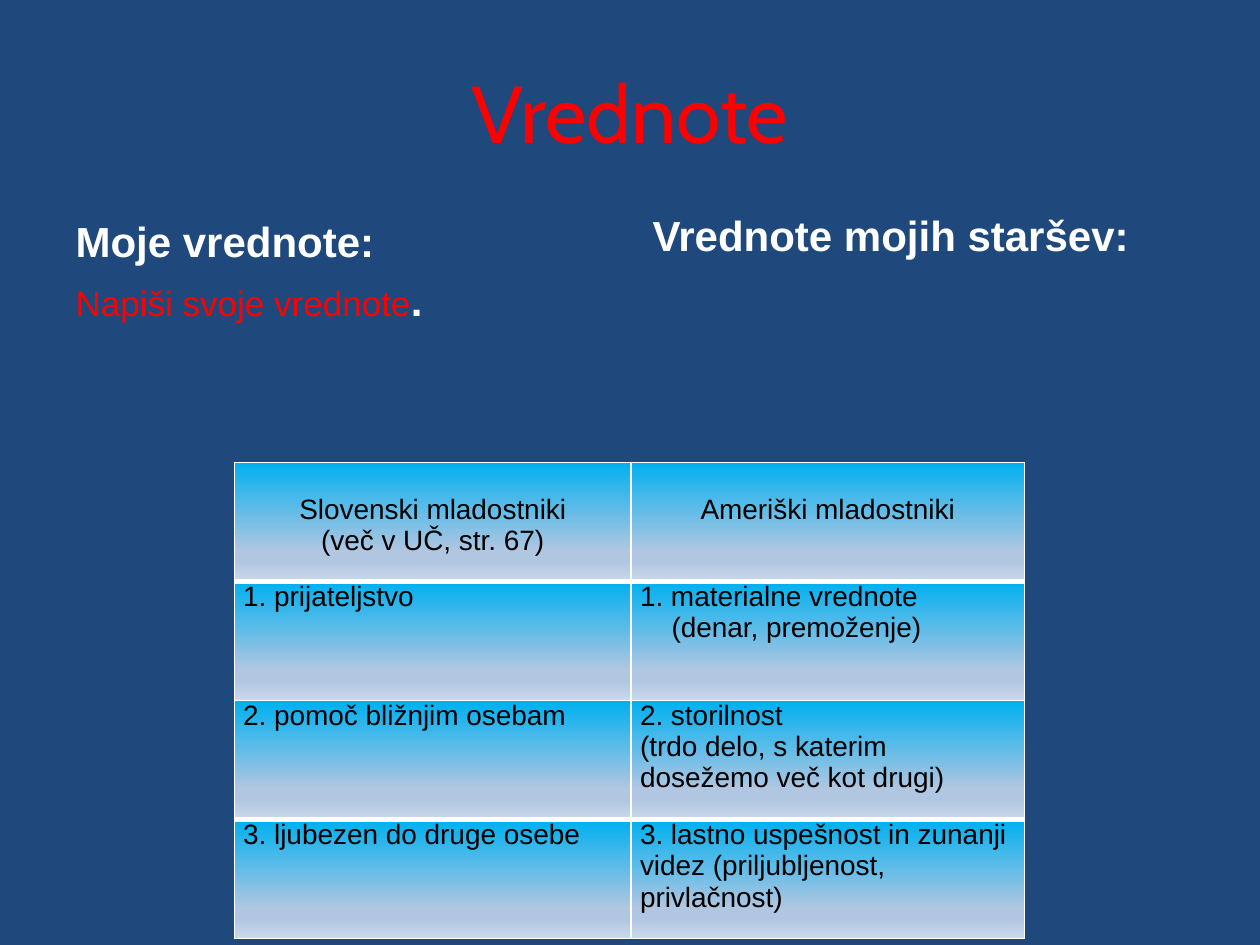
import pptx
import pptx.util
import pptx.dml.color
import pptx.enum.text
import pptx.oxml
import pptx.oxml.ns

Pt = pptx.util.Pt
Align = pptx.enum.text.PP_ALIGN
Anchor = pptx.enum.text.MSO_ANCHOR
HUES = {"navy": "1F497D", "red": "FF0000", "white": "FFFFFF", "black": "000000",
        "sky": "00B0F0", "mist": "B0C6E1", "pale": "CAD9EB"}
STOPS = [(0, "sky"), (74, "mist"), (83, "mist"), (100, "pale")]

FORMS = {
    "title": {"name": "Cabin", "size": Pt(46), "bold": False, "hue": "red"},
    "head": {"name": "Arial", "size": Pt(24), "bold": True, "hue": "white"},
    "task": {"name": "Arial", "size": Pt(20), "bold": False, "hue": "red"},
    "cell": {"name": "Arial", "size": Pt(16), "bold": False, "hue": "black"},
}


def write(para, text, form):
    run = para.add_run()
    run.text = text
    for key, value in FORMS[form].items():
        if key == "hue":
            run.font.color.rgb = pptx.dml.color.RGBColor.from_string(HUES[value])
        else:
            setattr(run.font, key, value)


def paint(cell, top, base):
    """Give a cell its white borders, in points, and its gradient."""
    props = cell._tc.get_or_add_tcPr()
    space = pptx.oxml.ns.nsdecls("a")
    for side, width in {"L": 1, "R": 1, "T": top, "B": base}.items():
        props.append(pptx.oxml.parse_xml(
            f'<a:ln{side} {space} w="{Pt(width)}"><a:solidFill>'
            f'<a:srgbClr val="{HUES["white"]}"/></a:solidFill></a:ln{side}>'))
    stops = "".join(f'<a:gs pos="{share * 1000}"><a:srgbClr val="{HUES[hue]}"/></a:gs>'
                    for share, hue in STOPS)
    props.append(pptx.oxml.parse_xml(
        f'<a:gradFill {space}><a:gsLst>{stops}</a:gsLst><a:lin ang="5400000"/></a:gradFill>'))


deck = pptx.Presentation()
deck.slide_width = pptx.util.Inches(10)
deck.slide_height = pptx.util.Inches(7.5)
col = deck.slide_width / 100
row = deck.slide_height / 75

slide = deck.slides.add_slide(deck.slide_layouts[4])
slide.background.fill.solid()
slide.background.fill.fore_color.rgb = pptx.dml.color.RGBColor.from_string(HUES["navy"])
holders = {item.placeholder_format.idx: item for item in slide.placeholders}

# Title and the two headings: place in columns and rows, anchor, lines of runs
texts = {
    0: ((5, 2.6, 90, 12.5), Anchor.MIDDLE, [[("Vrednote", "title")]]),
    1: ((5, 16.6, 44.2, 9.2), Anchor.TOP,
        [[("Moje vrednote:", "head")],
         [("Napiši svoje vrednote", "task"), (".", "head")]]),
    3: ((50.8, 16.1, 44.2, 9.2), Anchor.TOP, [[("Vrednote mojih staršev:", "head")]]),
}
for index, holder in holders.items():
    if index not in texts:
        holder.element.getparent().remove(holder.element)
        continue
    place, anchor, lines = texts[index]
    for key, value, unit in zip(("left", "top", "width", "height"), place, (col, row) * 2):
        setattr(holder, key, round(value * unit))
    frame = holder.text_frame
    frame.vertical_anchor = anchor
    for number, line in enumerate(lines):
        para = frame.add_paragraph() if number else frame.paragraphs[0]
        for text, form in line:
            write(para, text, form)
holders[0].text_frame.paragraphs[0].alignment = Align.CENTER

# Table of values
rows = [
    ("Slovenski mladostniki\n(več v UČ, str. 67)", "Ameriški mladostniki"),
    ("1. prijateljstvo", "1. materialne vrednote\n(denar, premoženje)"),
    ("2. pomoč bližnjim osebam",
     "2. storilnost\n(trdo delo, s katerim dosežemo več kot drugi)"),
    ("3. ljubezen do druge osebe",
     "3. lastno uspešnost in zunanji videz (priljubljenost, privlačnost)"),
]
rules = [1, 3, 1, 3, 1]
widths = [31.5, 31.2]
tall = 9.45
table = slide.shapes.add_table(
    len(rows), len(widths), round(18.6 * col), round(36.7 * row),
    round(sum(widths) * col), round(len(rows) * tall * row)).table
for column, width in zip(table.columns, widths):
    column.width = round(width * col)

for r, texts in enumerate(rows):
    for c, text in enumerate(texts):
        cell = table.cell(r, c)
        margins = {"margin_left": 0.7 * col, "margin_right": 0.7 * col,
                   "margin_top": 0 if r else 2.5 * row, "margin_bottom": 0}
        for key, value in margins.items():
            setattr(cell, key, round(value))
        for number, line in enumerate(text.split("\n")):
            frame = cell.text_frame
            para = frame.add_paragraph() if number else frame.paragraphs[0]
            para.alignment = Align.LEFT if r else Align.CENTER
            write(para, line, "cell")
        paint(cell, rules[r], rules[r + 1])

# The note under the first American value is set in
note = table.cell(1, 1).text_frame.paragraphs[1]
note._p.get_or_add_pPr().set("marL", str(round(2.5 * col)))

deck.save("out.pptx")
